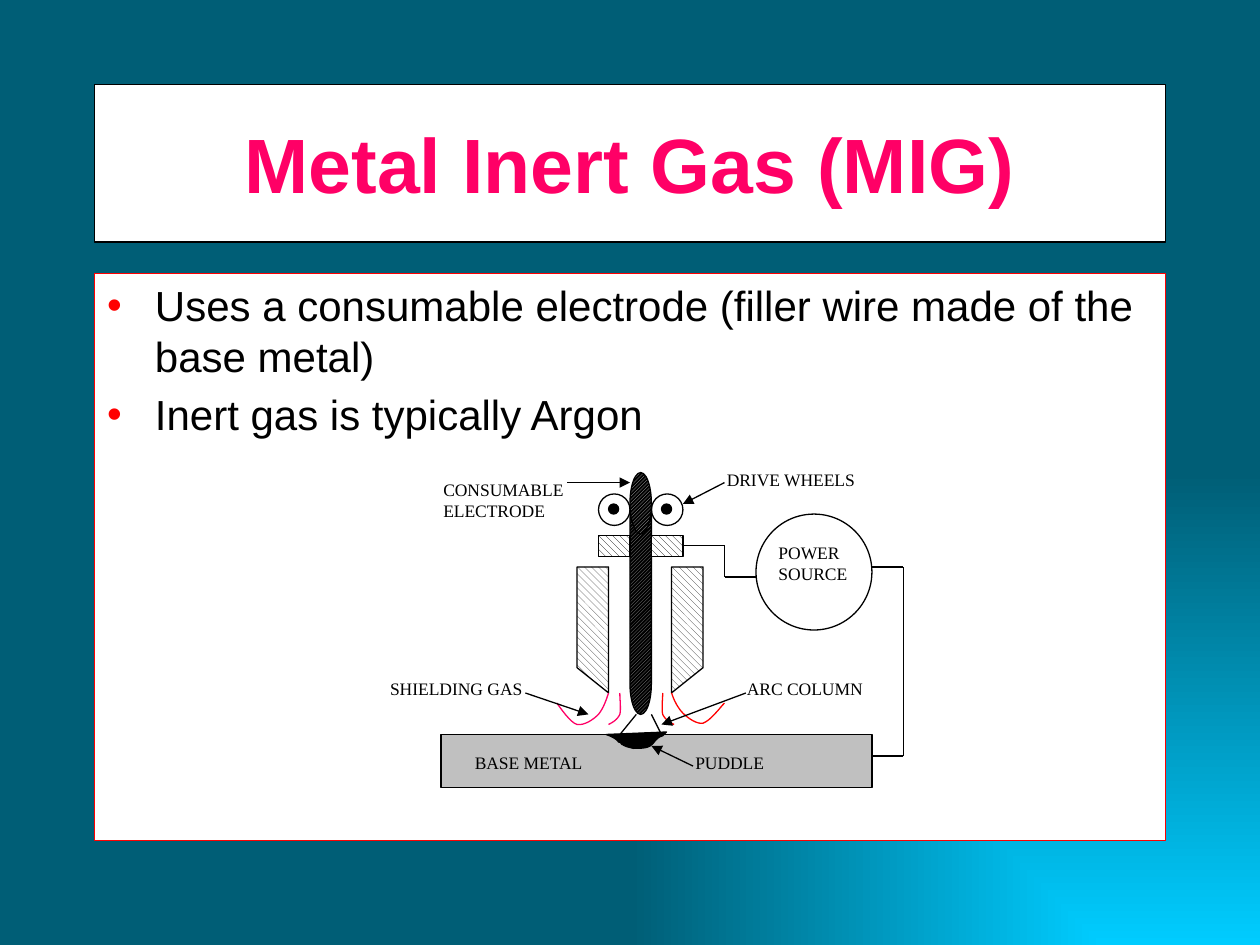
import pptx
import pptx.dml.color
import pptx.enum.dml
import pptx.enum.shapes
import pptx.enum.text
import pptx.oxml
import pptx.oxml.ns
import pptx.util

Inches, Pt = pptx.util.Inches, pptx.util.Pt
RGB = pptx.dml.color.RGBColor
SHAPE = pptx.enum.shapes.MSO_SHAPE
PATTERN = pptx.enum.dml.MSO_PATTERN
ALIGN = pptx.enum.text.PP_ALIGN
ANCHOR = pptx.enum.text.MSO_ANCHOR
AUTOSIZE = pptx.enum.text.MSO_AUTO_SIZE
qn = pptx.oxml.ns.qn

BLACK = RGB(0x00, 0x00, 0x00)
WHITE = RGB(0xFF, 0xFF, 0xFF)
RED = RGB(0xFF, 0x00, 0x00)
PINK = RGB(0xFF, 0x00, 0x66)
SILVER = RGB(0xC0, 0xC0, 0xC0)
GRAY = RGB(0x96, 0x96, 0x96)
CHARCOAL = RGB(0x33, 0x33, 0x33)
CYAN = RGB(0x00, 0xCC, 0xFF)
TEAL = RGB(0x00, 0x5E, 0x76)


def add_xml(parent, tag, **attrs):
    child = pptx.oxml.parse_xml(f"<{tag} {pptx.oxml.ns.nsdecls('a')}/>")
    for name, value in attrs.items():
        child.set(name, value)
    parent.append(child)
    return child


def set_background(s):
    fill = s.background.fill
    fill.gradient()
    for stop, color in zip(fill.gradient_stops, (CYAN, TEAL)):
        stop.color.rgb = color
    lin = s._element.find(".//" + qn("a:lin"))
    grad = lin.getparent()
    grad.remove(lin)
    center = add_xml(grad, "a:path", path="rect")
    add_xml(center, "a:fillToRect", l="100000", t="100000")


def style_shape(sp, fill=None, line=BLACK, pattern=None):
    if pattern:
        sp.fill.patterned()
        sp.fill.pattern, sp.fill.fore_color.rgb, sp.fill.back_color.rgb = pattern
    elif fill is None:
        sp.fill.background()
    else:
        sp.fill.solid()
        sp.fill.fore_color.rgb = fill
    sp.line.color.rgb = line
    sp.line.width = Pt(0.75)


def fill_placeholder(sp, box, texts, size, color, line):
    sp.left, sp.top, sp.width, sp.height = map(Inches, box)
    style_shape(sp, WHITE, line)
    tf = sp.text_frame
    tf.text = "\n".join(texts)
    tf.auto_size = AUTOSIZE.NONE
    for p in tf.paragraphs:
        p.font.name, p.font.size, p.font.color.rgb = "Arial", Pt(size), color
    return tf


def add_title(s):
    tf = fill_placeholder(s.shapes.title, (0.75, 0.67, 8.5, 1.25),
                          ["Metal Inert Gas (MIG)"], 44, PINK, BLACK)
    tf.vertical_anchor = ANCHOR.MIDDLE
    tf.paragraphs[0].alignment = ALIGN.CENTER
    tf.paragraphs[0].font.bold = True


def add_body(s):
    texts = ["Uses a consumable electrode (filler wire made of the base metal)",
             "Inert gas is typically Argon"]
    tf = fill_placeholder(s.placeholders[1], (0.75, 2.17, 8.5, 4.5),
                          texts, 24, BLACK, RED)
    for p in tf.paragraphs:
        pPr = p._p.get_or_add_pPr()
        pPr.set("marL", str(Inches(0.38)))
        pPr.set("indent", str(-Inches(0.38)))
        default = pPr.find(qn("a:defRPr"))
        color = add_xml(pPr, "a:buClr")
        add_xml(color, "a:srgbClr", val=str(RED))
        bullet = add_xml(pPr, "a:buChar", char="•")
        default.addprevious(color)
        default.addprevious(bullet)


def add_part(s, kind, box, fill=None, pattern=None, flips=()):
    sp = s.shapes.add_shape(kind, *map(Inches, box))
    sp.shadow.inherit = False
    style_shape(sp, fill, pattern=pattern)
    for flip in flips:
        sp._element.spPr.get_or_add_xfrm().set(flip, "1")
    return sp


def add_line(s, start, end, arrow=False):
    line = s.shapes.add_connector(pptx.enum.shapes.MSO_CONNECTOR.STRAIGHT,
                                  *map(Inches, start + end))
    line.line.color.rgb = BLACK
    line.line.width = Pt(0.75)
    if arrow:
        add_xml(line.line._get_or_add_ln(), "a:tailEnd", type="triangle")
    add_xml(line._element.spPr, "a:effectLst")


def add_wire(s, points):
    for start, end in zip(points, points[1:]):
        add_line(s, start, end)


def bezier(points, steps=8):
    curve = [points[0]]
    for i in range(0, len(points) - 1, 3):
        a, b, c, d = points[i:i + 4]
        for t in (n / steps for n in range(1, steps + 1)):
            u = 1 - t
            curve.append(tuple(u**3 * a[k] + 3 * u * u * t * b[k]
                               + 3 * u * t * t * c[k] + t**3 * d[k] for k in (0, 1)))
    return curve


def add_curve(s, points, color, fill=None):
    curve = [(Inches(x), Inches(y)) for x, y in bezier(points)]
    builder = s.shapes.build_freeform(*curve[0])
    builder.add_line_segments(curve[1:], close=fill is not None)
    sp = builder.convert_to_shape()
    sp.shadow.inherit = False
    style_shape(sp, fill, color)


def add_label(s, text, box, align=ALIGN.LEFT):
    tf = s.shapes.add_textbox(*map(Inches, box)).text_frame
    tf.word_wrap = True
    tf.auto_size = AUTOSIZE.SHAPE_TO_FIT_TEXT
    p = tf.paragraphs[0]
    p.text, p.alignment = text, align
    p.font.name, p.font.size, p.font.color.rgb = "Times New Roman", Pt(10), BLACK


def add_torch(s):
    hatch = PATTERN.WIDE_DOWNWARD_DIAGONAL
    add_part(s, SHAPE.RECTANGLE, (3.5, 5.83, 3.42, 0.42), SILVER)
    for x, flips in ((4.58, ["flipV"]), (5.33, ["flipH", "flipV"])):
        add_part(s, SHAPE.FLOWCHART_MANUAL_INPUT, (x, 4.5, 0.25, 1),
                 pattern=(hatch, CHARCOAL, WHITE), flips=flips)
    electrode = add_part(s, SHAPE.CAN, (5, 3.75, 0.17, 1.92),
                         pattern=(PATTERN.DARK_UPWARD_DIAGONAL, GRAY, BLACK))
    electrode.adjustments[0] = 2.875
    for x in (4.75, 5.17):
        add_part(s, SHAPE.RECTANGLE, (x, 4.25, 0.25, 0.17), pattern=(hatch, BLACK, WHITE))
        add_part(s, SHAPE.OVAL, (x, 3.92, 0.25, 0.25))
        add_part(s, SHAPE.OVAL, (x + 0.08, 4, 0.08, 0.08), BLACK)
    add_part(s, SHAPE.OVAL, (6, 4.08, 0.92, 0.92))


def add_gas_and_puddle(s):
    add_curve(s, [(4.83, 5.5), (4.81, 5.56), (4.79, 5.62), (4.75, 5.67), (4.71, 5.71),
                  (4.64, 5.76), (4.58, 5.75), (4.53, 5.74), (4.44, 5.61), (4.42, 5.58)], PINK)
    add_curve(s, [(5.33, 5.5), (5.35, 5.56), (5.38, 5.62), (5.42, 5.66), (5.46, 5.7),
                  (5.53, 5.75), (5.58, 5.74), (5.64, 5.72), (5.72, 5.61), (5.75, 5.58)], RED)
    add_curve(s, [(4.92, 5.5), (4.92, 5.56), (4.93, 5.62), (4.92, 5.67),
                  (4.9, 5.71), (4.87, 5.73), (4.83, 5.75)], PINK)
    add_curve(s, [(5.26, 5.5), (5.26, 5.56), (5.25, 5.62), (5.26, 5.67),
                  (5.28, 5.71), (5.31, 5.73), (5.35, 5.75)], RED)
    add_curve(s, [(4.81, 5.83), (4.84, 5.84), (4.89, 5.86), (4.91, 5.89), (4.93, 5.89),
                  (4.93, 5.91), (4.94, 5.91), (4.97, 5.93), (5.03, 5.94), (5.03, 5.94),
                  (5.07, 5.94), (5.11, 5.94), (5.14, 5.93), (5.2, 5.91), (5.19, 5.86),
                  (5.26, 5.84), (5.27, 5.83), (5.29, 5.81), (5.29, 5.81)], BLACK, BLACK)


def add_labels(s):
    for text, box in (("BASE METAL", (3.67, 5.92, 1.5, 0.27)),
                      ("PUDDLE", (5.42, 5.92, 1.17, 0.27)),
                      ("POWER SOURCE", (6.08, 4.25, 0.75, 0.43)),
                      ("DRIVE WHEELS", (5.67, 3.67, 1.5, 0.27)),
                      ("CONSUMABLE ELECTRODE", (3.42, 3.75, 1.17, 0.43)),
                      ("ARC COLUMN", (5.83, 5.33, 1.17, 0.27))):
        add_label(s, text, box)
    add_label(s, "SHIELDING GAS", (2.83, 5.33, 1.58, 0.27), ALIGN.CENTER)
    for start, end in (((4.5, 3.83), (5, 3.83)), ((5.75, 3.83), (5.42, 4)),
                       ((5.92, 5.5), (5.25, 5.75)), ((4.17, 5.5), (4.67, 5.67)),
                       ((5.5, 6.08), (5.17, 5.92))):
        add_line(s, start, end, arrow=True)


def main():
    prs = pptx.Presentation()
    prs.slide_width, prs.slide_height = Inches(10), Inches(7.5)
    s = prs.slides.add_slide(prs.slide_layouts[1])
    set_background(s)
    add_title(s)
    add_body(s)
    add_torch(s)
    add_gas_and_puddle(s)
    add_wire(s, [(6.92, 4.5), (7.17, 4.5), (7.17, 6), (6.92, 6)])
    add_wire(s, [(6, 4.58), (5.75, 4.58), (5.75, 4.33), (5.42, 4.33)])
    add_line(s, (5.05, 5.67), (4.92, 5.83))
    add_line(s, (5.17, 5.67), (5.25, 5.83))
    add_labels(s)
    prs.save("out.pptx")


if __name__ == "__main__":
    main()
